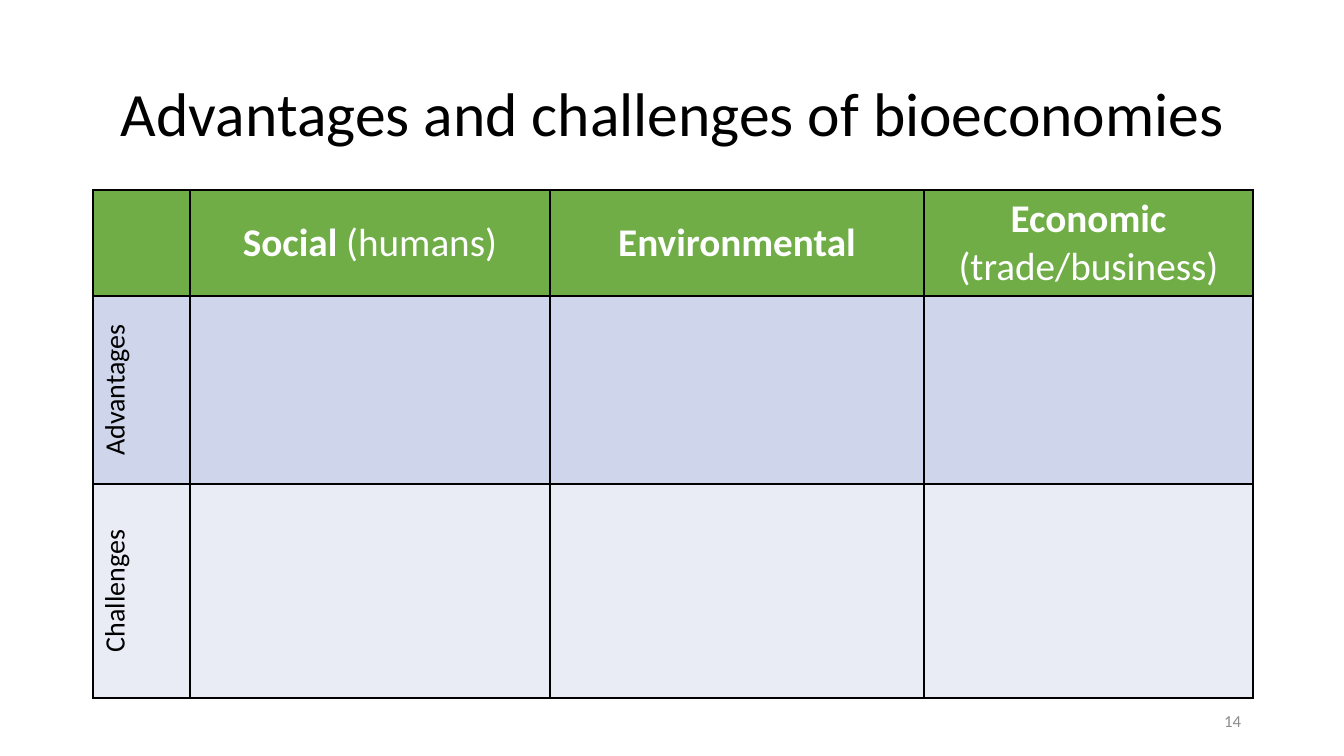
from pptx import Presentation
from pptx.dml.color import RGBColor
from pptx.enum.text import MSO_ANCHOR, PP_ALIGN
from pptx.oxml.ns import qn
from pptx.util import Emu, Pt
from lxml.etree import SubElement

FONT = "Calibri"
BLACK, WHITE, GREY, GREEN = "000000", "FFFFFF", "8C8C8C", "70AD47"
COLUMN_WIDTHS = [97, 360, 374, 329]
ROW_HEIGHTS = [106, 188, 214]
ROW_FILLS = [GREEN, "CFD5EA", "E9EBF5"]
# Each heading is a bold part and a regular part
HEADINGS = [("Social ", "(humans)"), ("Environmental", ""), ("Economic ", "(trade/business)")]
ROW_LABELS = ["Advantages", "Challenges"]


def px(count):
    return Emu(round(count * 914400 / 100.8))


def color(hex_string):
    return RGBColor.from_string(hex_string)


def add_span(para, text, size, hex_string, bold=False):
    span = para.add_run()
    span.text = text
    span.font.name = FONT
    span.font.size = Pt(size)
    span.font.bold = bold
    span.font.color.rgb = color(hex_string)


def add_label(page, area, text, size, hex_string, align, line_spacing=1.0):
    box = page.shapes.add_textbox(*map(px, area))
    frame = box.text_frame
    frame.word_wrap = True
    frame.vertical_anchor = MSO_ANCHOR.MIDDLE
    para = frame.paragraphs[0]
    para.alignment = align
    para.line_spacing = line_spacing
    add_span(para, text, size, hex_string)


def style_cell(cell, fill):
    properties = cell._tc.get_or_add_tcPr()
    # Borders come before the fill
    for side in ("a:lnL", "a:lnR", "a:lnT", "a:lnB"):
        line = SubElement(properties, qn(side), w=str(Pt(1)))
        SubElement(SubElement(line, qn("a:solidFill")), qn("a:srgbClr"), val=BLACK)
    cell.fill.solid()
    cell.fill.fore_color.rgb = color(fill)
    cell.vertical_anchor = MSO_ANCHOR.MIDDLE
    cell.text_frame.paragraphs[0].alignment = PP_ALIGN.CENTER


def add_matrix(page, left, top):
    area = (left, top, sum(COLUMN_WIDTHS), sum(ROW_HEIGHTS))
    table = page.shapes.add_table(
        len(ROW_HEIGHTS), len(COLUMN_WIDTHS), *map(px, area)).table
    for column, width in zip(table.columns, COLUMN_WIDTHS):
        column.width = px(width)
    for row, height, fill in zip(table.rows, ROW_HEIGHTS, ROW_FILLS):
        row.height = px(height)
        for cell in row.cells:
            style_cell(cell, fill)

    # Column headings
    for index, (strong, plain) in enumerate(HEADINGS, start=1):
        para = table.cell(0, index).text_frame.paragraphs[0]
        add_span(para, strong, 28, WHITE, bold=True)
        if plain:
            add_span(para, plain, 28, WHITE)

    # Row labels, reading upwards
    for index, label in enumerate(ROW_LABELS, start=1):
        cell = table.cell(index, 0)
        cell._tc.get_or_add_tcPr().set("vert", "vert270")
        add_span(cell.text_frame.paragraphs[0], label, 20, BLACK)


def main():
    deck = Presentation()
    deck.slide_width, deck.slide_height = px(1344), px(756)
    page = deck.slides.add_slide(deck.slide_layouts[6])
    # Title
    add_label(page, (67, 44, 1212, 146), "Advantages and challenges of bioeconomies",
              44, BLACK, PP_ALIGN.CENTER, 0.9)
    # Slide number
    add_label(page, (949, 701, 302, 40), "14", 12, GREY, PP_ALIGN.RIGHT)
    # Comparison table
    add_matrix(page, 93, 190)
    deck.save("out.pptx")


if __name__ == "__main__":
    main()
